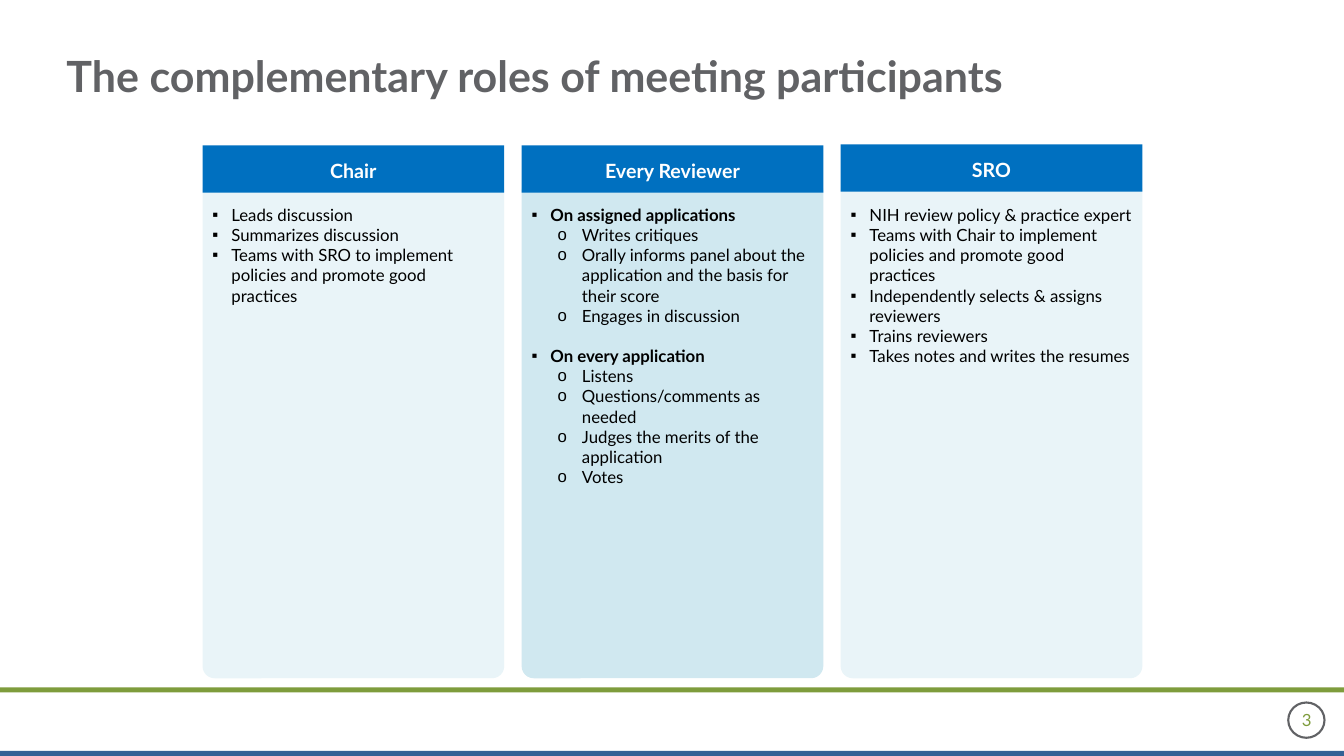
import pptx
import pptx.dml.color
import pptx.enum.shapes
import pptx.enum.text
import pptx.oxml.ns
import pptx.util
from lxml import etree

Pt = pptx.util.Pt
SHAPE = pptx.enum.shapes.MSO_SHAPE
ALIGN = pptx.enum.text.PP_ALIGN
ANCHOR = pptx.enum.text.MSO_ANCHOR
qn = pptx.oxml.ns.qn

COLUMN_LEFT, COLUMN_STEP, COLUMN_WIDTH = 144.7, 227.9, 215.5
BULLETS = [("▪", 13.5, -13.5), ("o", 36, -17.3)]
COLUMNS = [
    ("Chair", "DFF0F5", 68, 103.9, [
        (0, "Leads discussion"),
        (0, "Summarizes discussion"),
        (0, "Teams with SRO to implement policies and promote good practices"),
    ]),
    ("Every Reviewer", "D0E8F0", 100, 103.9, [
        (0, "On assigned applications"),
        (1, "Writes critiques"),
        (1, "Orally informs panel about the application and the basis for their score"),
        (1, "Engages in discussion"),
        (0, "On every application"),
        (1, "Listens"),
        (1, "Questions/comments as needed"),
        (1, "Judges the merits of the application"),
        (1, "Votes"),
    ]),
    ("SRO", "DFF0F5", 68, 103.2, [
        (0, "NIH review policy & practice expert"),
        (0, "Teams with Chair to implement policies and promote good practices"),
        (0, "Independently selects & assigns reviewers"),
        (0, "Trains reviewers"),
        (0, "Takes notes and writes the resumes"),
    ]),
]


def color(value):
    return pptx.dml.color.RGBColor.from_string(value)


def apply_format(target, values):
    for name, value in values.items():
        setattr(target, name, value)


def add_block(shapes, kind, place, fill=None, opacity=100):
    block = shapes.add_shape(kind, *map(Pt, place))
    block.shadow.inherit = False
    block.line.fill.background()
    if fill is None:
        block.fill.background()
        return block
    block.fill.solid()
    block.fill.fore_color.rgb = color(fill)
    if opacity < 100:
        tint = block.fill._xPr.find(qn("a:solidFill"))[0]
        etree.SubElement(tint, qn("a:alpha"), val=str(opacity * 1000))
    return block


def set_frame(box, anchor, insets=(7.2, 3.6, 7.2, 3.6)):
    left, top, right, bottom = map(Pt, insets)
    apply_format(box.text_frame, {
        "word_wrap": True, "vertical_anchor": anchor,
        "margin_left": left, "margin_top": top,
        "margin_right": right, "margin_bottom": bottom,
    })


def write(para, text, size, ink, bold=False, align=ALIGN.LEFT):
    para.alignment = align
    span = para.add_run()
    span.text = text
    apply_format(span.font, {"name": "Lato", "size": Pt(size), "bold": bold})
    span.font.color.rgb = color(ink)


def add_text(shapes, place, anchor, text, *style, insets=(7.2, 3.6, 7.2, 3.6)):
    box = shapes.add_textbox(*map(Pt, place))
    set_frame(box, anchor, insets)
    write(box.text_frame.paragraphs[0], text, *style)


def set_bullet(para, level):
    mark, margin, indent = BULLETS[level]
    para.level = level
    properties = para._p.get_or_add_pPr()
    properties.set("marL", str(Pt(margin)))
    properties.set("indent", str(Pt(indent)))
    etree.SubElement(properties, qn("a:buFont"), typeface="Arial")
    etree.SubElement(properties, qn("a:buChar"), char=mark)


def add_duties(shapes, left, duties):
    box = shapes.add_textbox(Pt(left), Pt(142.6), Pt(COLUMN_WIDTH), Pt(254))
    set_frame(box, ANCHOR.TOP)
    has_headings = any(level for level, text in duties)
    for index, (level, text) in enumerate(duties):
        para = box.text_frame.add_paragraph() if index else box.text_frame.paragraphs[0]
        set_bullet(para, level)
        is_heading = has_headings and level == 0
        if is_heading and index:
            para.space_before = Pt(14.4)
        write(para, text, 12, "000000", is_heading)


def add_column(page, left, role, fill, opacity, top, duties):
    shapes = page.shapes.add_group_shape().shapes
    panel = add_block(shapes, SHAPE.ROUNDED_RECTANGLE,
                      (left, 127.4, COLUMN_WIDTH, 357.1), fill, opacity)
    panel.adjustments[0] = 0.04
    header = add_block(shapes, SHAPE.RECTANGLE, (left, top, COLUMN_WIDTH, 33.8), "0070C0")
    set_frame(header, ANCHOR.MIDDLE, (7.2, 5.2, 7.2, 3.6))
    write(header.text_frame.paragraphs[0], role, 14, "FFFFFF", True, ALIGN.CENTER)
    add_duties(shapes, left, duties)


def add_footer(page):
    for top, fill in ((491, "7E9C3C"), (536.4, "336195")):
        add_block(page.shapes, SHAPE.RECTANGLE, (0, top, 960, 3.6), fill)
    ring = add_block(page.shapes, SHAPE.OVAL, (920.2, 501.8, 25.9, 25.2))
    ring.line.color.rgb = color("616265")
    ring.line.width = Pt(1.5)
    add_text(page.shapes, (911.5, 503.3, 43.9, 25.9), ANCHOR.TOP,
             "3", 12, "7E9C3C", False, ALIGN.CENTER)


def main():
    deck = pptx.Presentation()
    apply_format(deck, {"slide_width": Pt(960), "slide_height": Pt(540)})
    page = deck.slides.add_slide(deck.slide_layouts[6])
    add_footer(page)
    add_text(page.shapes, (47.5, 23.8, 864, 59.8), ANCHOR.MIDDLE,
             "The complementary roles of meeting participants",
             30.7, "616265", True, insets=(0, 3.6, 7.2, 3.6))
    for index, column in enumerate(COLUMNS):
        add_column(page, COLUMN_LEFT + index * COLUMN_STEP, *column)
    deck.save("out.pptx")


if __name__ == "__main__":
    main()
